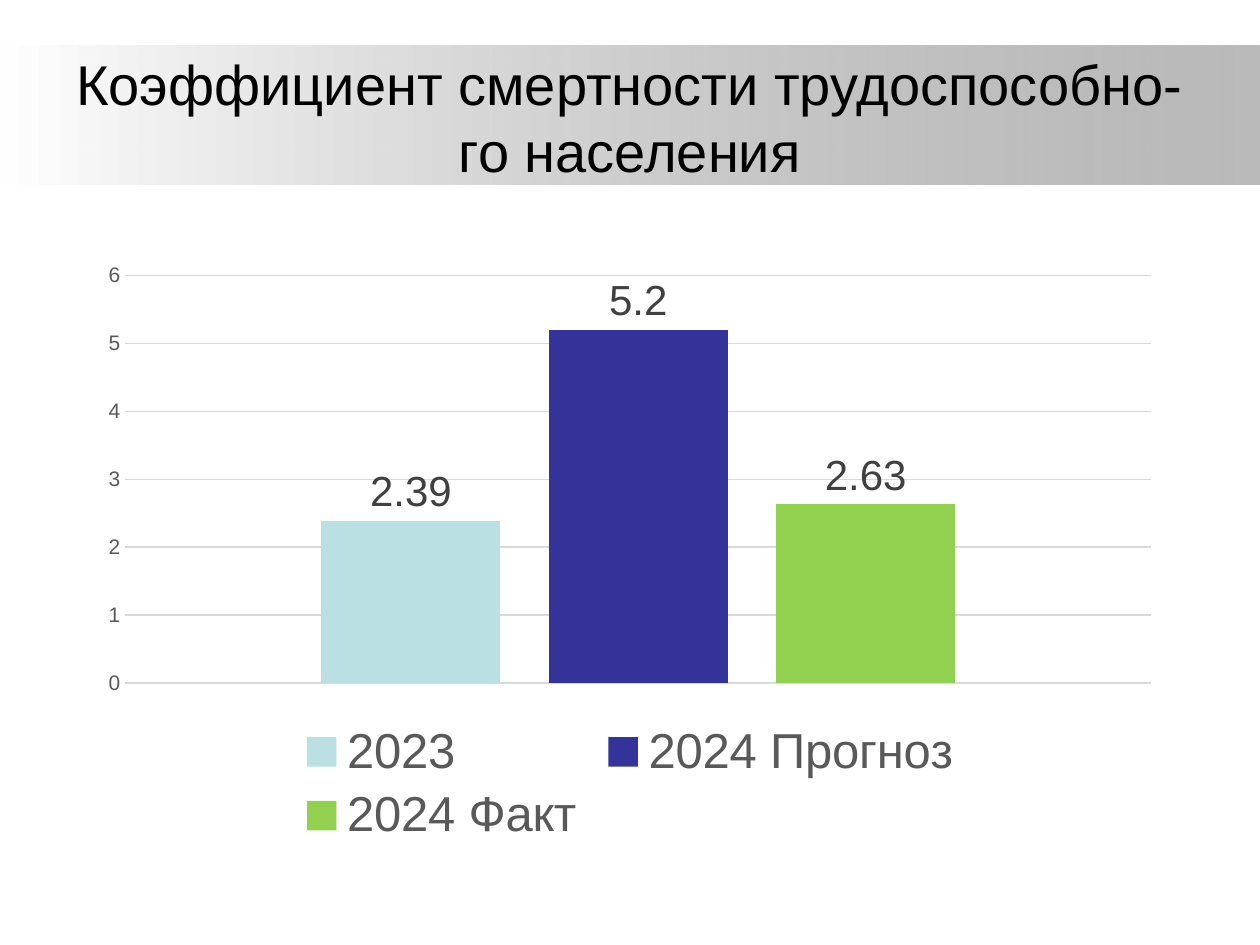
from lxml.etree import SubElement
from pptx import Presentation
from pptx.chart.data import CategoryChartData
from pptx.dml.color import RGBColor
from pptx.enum.chart import XL_CHART_TYPE as ChartType, XL_LABEL_POSITION as LabelPos
from pptx.enum.chart import XL_LEGEND_POSITION as LegendPos, XL_TICK_MARK as Tick
from pptx.enum.shapes import MSO_SHAPE as Shape
from pptx.enum.text import MSO_ANCHOR as Anchor, MSO_AUTO_SIZE as AutoSize, PP_ALIGN as Align
from pptx.oxml.ns import qn
from pptx.util import Inches, Pt

COLORS = {
    "white": "FFFFFF", "band": "808080", "title": "000000", "grid": "D9D9D9",
    "muted": "595959", "label": "404040",
    "2023": "BBE0E3", "2024 Прогноз": "333399", "2024 Факт": "92D050",
}
RATES = {"2023": 2.39, "2024 Прогноз": 5.2, "2024 Факт": 2.63}
WIDTH, HEIGHT = Inches(10), Inches(7.5)


def color(name):
    """Return the named colour."""
    return RGBColor.from_string(COLORS[name])


def box(left, top, width, height):
    """Turn shares of the slide into a left, top, width, height tuple."""
    return int(left * WIDTH), int(top * HEIGHT), int(width * WIDTH), int(height * HEIGHT)


def style_font(font, size, tone):
    """Set the face, size and colour of a font."""
    font.name, font.size = "Arial", Pt(size)
    font.color.rgb = color(tone)


def write_text(shape, text, size=32, tone="title", align=Align.CENTER, anchor=Anchor.MIDDLE):
    """Put one formatted paragraph into a shape."""
    frame = shape.text_frame
    frame.word_wrap, frame.auto_size = True, AutoSize.NONE
    frame.vertical_anchor = anchor
    paragraph = frame.paragraphs[0]
    paragraph.alignment = align
    run = paragraph.add_run()
    run.text = text
    style_font(run.font, size, tone)


def add_band(slide):
    """Add the fading band behind the title."""
    band = slide.shapes.add_shape(Shape.RECTANGLE, *box(0, 0.048, 1, 0.147))
    band.shadow.inherit = False
    band.line.fill.background()
    band.fill.gradient()
    band.fill.gradient_angle = 0
    for stop, tone, position in zip(band.fill.gradient_stops, ("white", "band"), (0, 1)):
        stop.color.rgb, stop.position = color(tone), position
    faded = band._element.spPr.findall(".//" + qn("a:srgbClr"))[-1]
    SubElement(faded, qn("a:alpha"), val="54000")
    slide.shapes._spTree.insert(2, band._element)


def add_title(slide, text):
    """Place and fill the title placeholder."""
    title = slide.shapes.title
    title.left, title.top, title.width, title.height = box(0.05, 0.04, 0.9, 0.167)
    write_text(title, text)


def style_series(series):
    """Colour a series and show its value above the column."""
    series.format.fill.solid()
    series.format.fill.fore_color.rgb = color(series.name)
    labels = series.data_labels
    labels.show_value, labels.position = True, LabelPos.OUTSIDE_END
    style_font(labels.font, 24, "label")


def style_axes(chart):
    """Hide the category axis and lighten the value axis."""
    chart.category_axis.visible = False
    axis = chart.value_axis
    axis.major_tick_mark = axis.minor_tick_mark = Tick.NONE
    axis.format.line.fill.background()
    grid = axis.major_gridlines.format.line
    grid.width, grid.color.rgb = Pt(0.75), color("grid")
    style_font(axis.tick_labels.font, 12, "muted")


def add_rate_chart(slide):
    """Add the column chart of mortality rates."""
    data = CategoryChartData()
    data.categories = ["1"]
    for name, rate in RATES.items():
        data.add_series(name, [rate])
    place = box(0.069, 0.267, 0.862, 0.635)
    chart = slide.shapes.add_chart(ChartType.COLUMN_CLUSTERED, *place, data).chart
    style_font(chart.font, 10, "title")
    chart.has_title = False
    plot = chart.plots[0]
    plot.gap_width, plot.overlap, plot.vary_by_categories = 219, -27, False
    for series in plot.series:
        style_series(series)
    style_axes(chart)
    chart.has_legend = True
    chart.legend.position, chart.legend.include_in_layout = LegendPos.BOTTOM, False
    style_font(chart.legend.font, 28, "muted")


def main():
    """Build and save the slide."""
    deck = Presentation()
    deck.slide_width, deck.slide_height = WIDTH, HEIGHT
    slide = deck.slides.add_slide(deck.slide_layouts[5])
    add_band(slide)
    add_title(slide, "Коэффициент смертности трудоспособно-го населения")
    add_rate_chart(slide)
    deck.save("out.pptx")


if __name__ == "__main__":
    main()
